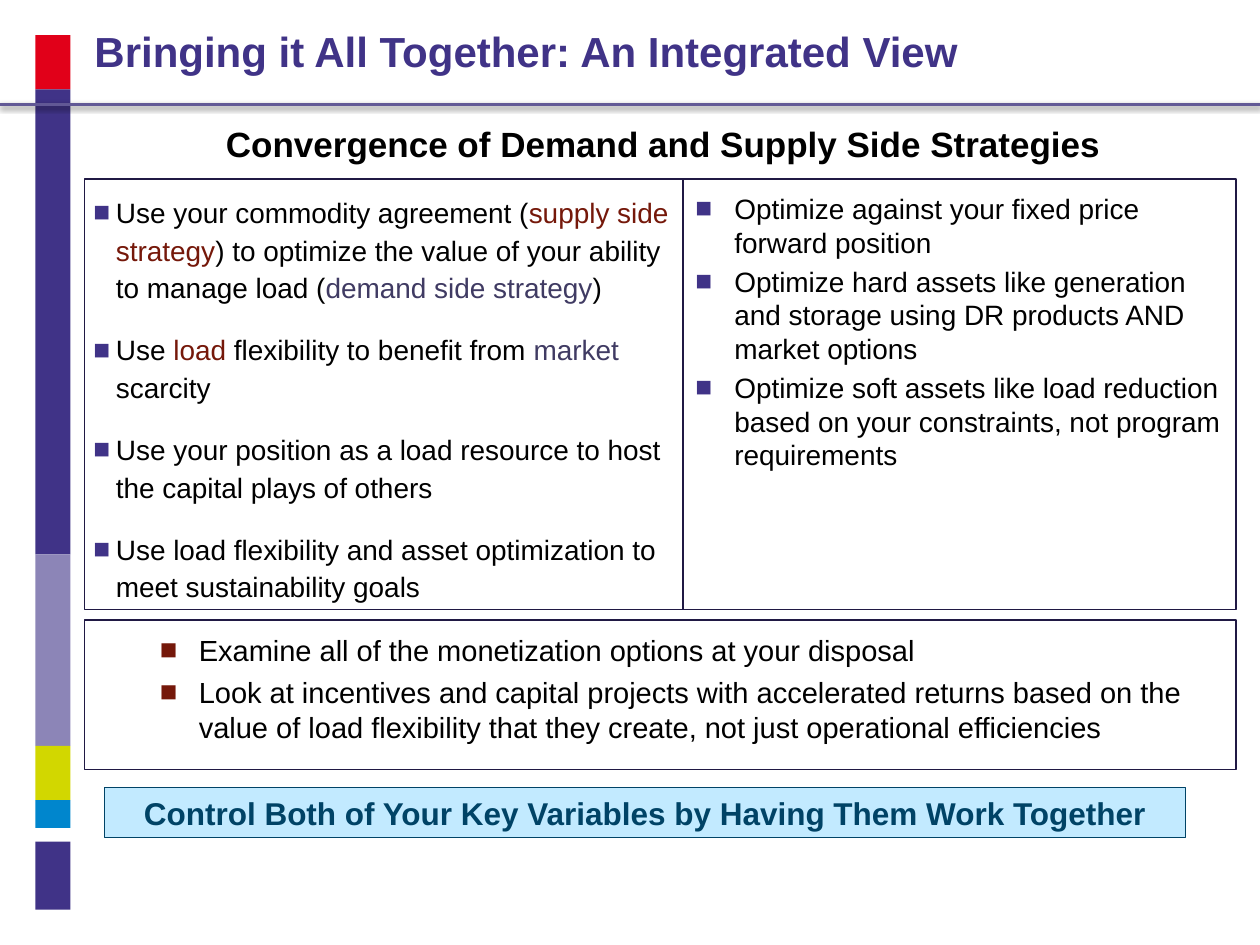
from lxml.etree import SubElement
from pptx import Presentation
from pptx.dml.color import RGBColor
from pptx.enum.shapes import MSO_CONNECTOR, MSO_SHAPE
from pptx.enum.text import MSO_ANCHOR, PP_ALIGN
from pptx.oxml.ns import qn
from pptx.util import Inches, Pt

FONT = "Arial"
BLACK, PURPLE, NAVY = "000000", "403387", "201944"
RED, SLATE, BLUE = "75180A", "403B63", "004366"

BARS = [
    (0.28, 0.43, "E10019"),
    (0.71, 3.69, PURPLE),
    (4.4, 1.52, "8C85B7"),
    (5.92, 0.43, "D2D700"),
    (6.35, 0.22, "0086CD"),
    (6.68, 0.54, PURPLE),
]

HEADINGS = [
    {"text": "Bringing it All Together: An Integrated View", "at": (0.75, 0.25, 8.13, 0.5),
     "size": 24, "color": PURPLE, "inset": 0, "anchor": MSO_ANCHOR.TOP,
     "format": {"alignment": PP_ALIGN.LEFT, "line_spacing": 0.9}},
    {"text": "Convergence of Demand and Supply Side Strategies", "at": (1.03, 0.92, 8.47, 0.44),
     "size": 20, "color": BLACK},
    {"text": "Control Both of Your Key Variables by Having Them Work Together",
     "at": (0.83, 6.25, 8.58, 0.4), "size": 18, "color": BLUE, "fill": "C2EAFF", "line": BLUE},
]

PANELS = [
    {"at": (0.67, 1.42, 4.75, 3.42), "inset": 0, "size": 16, "bullet": PURPLE,
     "indent": (0.25, 0.18), "before": 8,
     "format": {"line_spacing": 1.12, "space_after": Pt(6)},
     "items": [
         [("Use your commodity agreement (", BLACK), ("supply side strategy", RED),
          (") to optimize the value of your ability to manage load (", BLACK),
          ("demand side strategy", SLATE), (")", BLACK)],
         [("Use ", BLACK), ("load", RED), (" flexibility to benefit from ", BLACK),
          ("market", SLATE), (" scarcity", BLACK)],
         [("Use your position as a load resource to host the capital plays of others", BLACK)],
         [("Use load flexibility and asset optimization to meet sustainability goals", BLACK)],
     ]},
    {"at": (5.42, 1.42, 4.39, 3.42), "inset": 0.1, "size": 16, "bullet": PURPLE,
     "indent": (0.31, 0.31), "before": 3.2, "format": {},
     "items": [
         [("Optimize against your fixed price forward position", BLACK)],
         [("Optimize hard assets like generation and storage using DR products AND market options",
           BLACK)],
         [("Optimize soft assets like load reduction based on your constraints, "
           "not program requirements", BLACK)],
     ]},
    {"at": (0.67, 4.92, 9.14, 1.19), "inset": 0.1, "size": 16.6, "bullet": RED,
     "indent": (0.81, 0.31), "before": 4, "format": {},
     "items": [
         [("Examine all of the monetization options at your disposal", BLACK)],
         [("Look at incentives and capital projects with accelerated returns based on the value "
           "of load flexibility that they create, not just operational efficiencies", BLACK)],
     ]},
]


def rgb(value):
    return RGBColor.from_string(value)


def set_all(obj, values):
    for name, value in values.items():
        setattr(obj, name, value)


def add_rect(s, at, fill=None, line=None):
    sp = s.shapes.add_shape(MSO_SHAPE.RECTANGLE, *map(Inches, at))
    sp.shadow.inherit = False
    if fill:
        sp.fill.solid()
        sp.fill.fore_color.rgb = rgb(fill)
    else:
        sp.fill.background()
    if line:
        sp.line.color.rgb = rgb(line)
        sp.line.width = Pt(0.75)
    else:
        sp.line.fill.background()
    return sp


def set_frame(sp, anchor, side, top):
    tf = sp.text_frame
    set_all(tf, {"word_wrap": True, "vertical_anchor": anchor,
                 "margin_left": Inches(side), "margin_right": Inches(side),
                 "margin_top": Inches(top), "margin_bottom": Inches(top)})
    return tf


def add_run(p, text, size, color, bold=False):
    r = p.add_run()
    r.text = text
    set_all(r.font, {"name": FONT, "size": Pt(size), "bold": bold})
    r.font.color.rgb = rgb(color)


def add_bullet(p, color, left, hang):
    pPr = p._p.get_or_add_pPr()
    pPr.set("marL", str(Inches(left)))
    pPr.set("indent", str(-Inches(hang)))
    SubElement(SubElement(pPr, qn("a:buClr")), qn("a:srgbClr"), val=color)
    SubElement(pPr, qn("a:buFont"), typeface=FONT)
    SubElement(pPr, qn("a:buChar"), char="■")


def add_heading(s, h):
    if "fill" in h:
        sp = add_rect(s, h["at"], h["fill"], h["line"])
    else:
        sp = s.shapes.add_textbox(*map(Inches, h["at"]))
    tf = set_frame(sp, h.get("anchor", MSO_ANCHOR.MIDDLE), h.get("inset", 0.1), h.get("inset", 0.05))
    p = tf.paragraphs[0]
    set_all(p, h.get("format", {"alignment": PP_ALIGN.CENTER}))
    add_run(p, h["text"], h["size"], h["color"], True)


def add_panel(s, panel):
    sp = add_rect(s, panel["at"], line=NAVY)
    tf = set_frame(sp, MSO_ANCHOR.TOP, panel["inset"], 0.1)
    for i, runs in enumerate(panel["items"]):
        p = tf.add_paragraph() if i else tf.paragraphs[0]
        add_bullet(p, panel["bullet"], *panel["indent"])
        set_all(p, {"alignment": PP_ALIGN.LEFT, "space_before": Pt(panel["before"] if i else 0),
                    **panel["format"]})
        for text, color in runs:
            add_run(p, text, panel["size"], color)


def add_rule(s, y):
    cx = s.shapes.add_connector(MSO_CONNECTOR.STRAIGHT, Inches(10), Inches(y), 0, Inches(y))
    cx.line.color.rgb = rgb("615895")
    cx.line.width = Pt(2)
    effects = SubElement(cx._element.spPr, qn("a:effectLst"))
    shadow = SubElement(effects, qn("a:outerShdw"), blurRad=str(Pt(3)), dist=str(Pt(1)),
                        dir="5400000", rotWithShape="0")
    color = SubElement(shadow, qn("a:srgbClr"), val=BLACK)
    SubElement(color, qn("a:alpha"), val="38000")


def main():
    prs = Presentation()
    set_all(prs, {"slide_width": Inches(10), "slide_height": Inches(7.5)})
    s = prs.slides.add_slide(prs.slide_layouts[6])
    for top, height, color in BARS:
        add_rect(s, (0.28, top, 0.28, height), color)
    add_rule(s, 0.83)
    for panel in PANELS:
        add_panel(s, panel)
    for heading in HEADINGS:
        add_heading(s, heading)
    prs.save("out.pptx")


if __name__ == "__main__":
    main()
